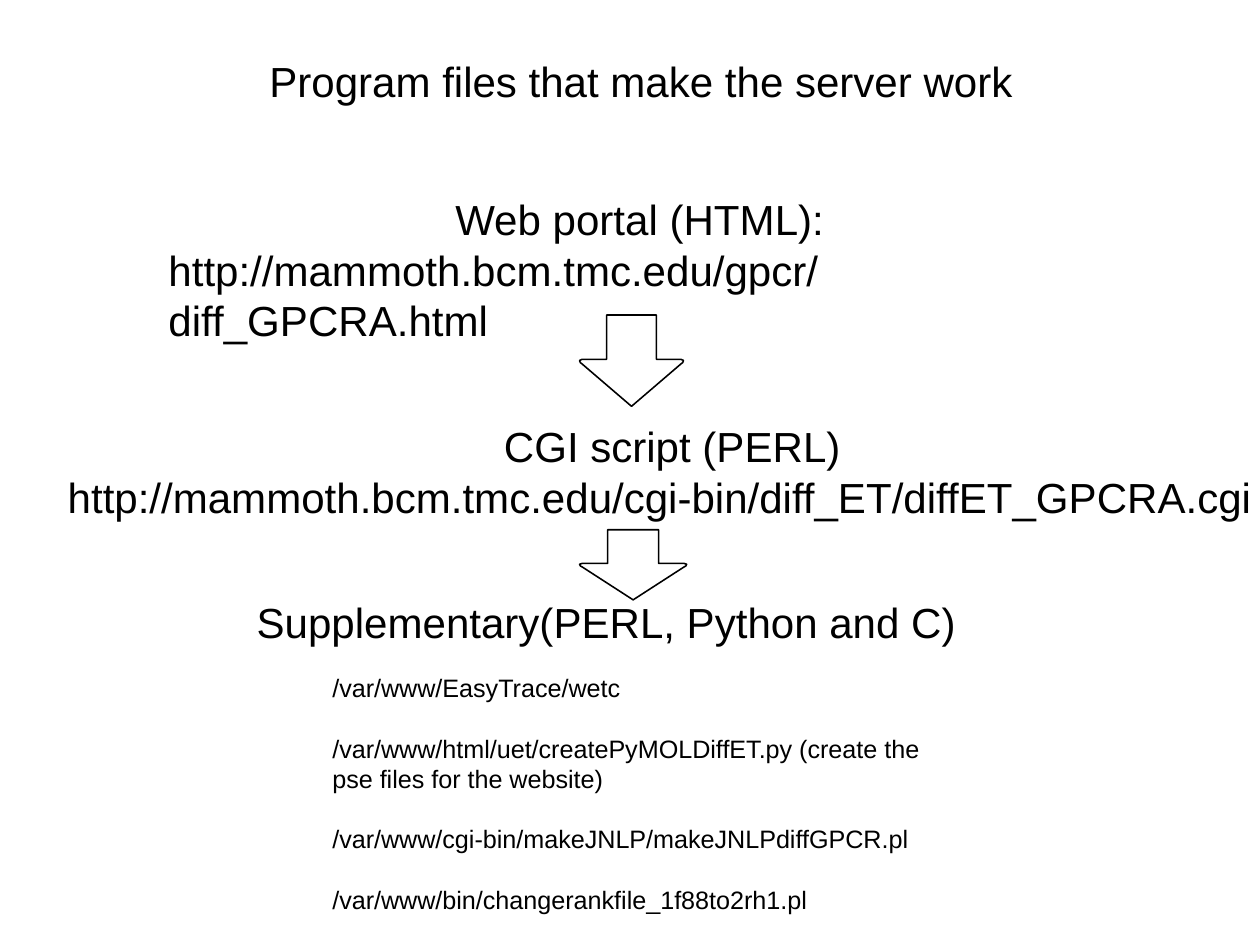
from dataclasses import dataclass

from pptx import Presentation
from pptx.dml.color import RGBColor as Color
from pptx.enum.text import MSO_ANCHOR as Anchor, PP_ALIGN as Align
from pptx.slide import Slide
from pptx.util import Pt


@dataclass(frozen=True)
class Theme:
    font: str = "Arial"
    ink: Color = Color(0, 0, 0)
    paper: Color = Color(255, 255, 255)
    large: float = 26.7
    small: float = 16
    lead: float = 1.2
    inset: float = 3
    stroke: float = 1


@dataclass(frozen=True)
class Line:
    text: str
    align: Align = Align.LEFT


@dataclass(frozen=True)
class Block:
    left: float
    top: float
    width: float
    height: float
    size: float
    lines: tuple[Line, ...]
    gap: float = 0


@dataclass(frozen=True)
class Arrow:
    mid: float
    top: float
    stem: float
    wing: float
    neck: float
    drop: float
    height: float


THEME = Theme()

BLOCKS = (
    Block(168, 32, 527, 65, THEME.large, (
        Line("Program files that make the server work"),
    )),
    Block(104, 120, 612, 70, THEME.large, (
        Line("Web portal (HTML): ", Align.CENTER),
        Line("http://mammoth.bcm.tmc.edu/gpcr/diff_GPCRA.html"),
    )),
    Block(40, 264, 774, 70, THEME.large, (
        Line("CGI script (PERL)", Align.CENTER),
        Line("http://mammoth.bcm.tmc.edu/cgi-bin/diff_ET/diffET_GPCRA.cgi"),
    )),
    Block(160, 376, 454, 52, THEME.large, (
        Line("Supplementary(PERL, Python and C)"),
    )),
    Block(208, 424, 407, 168, THEME.small, (
        Line("/var/www/EasyTrace/wetc"),
        Line("/var/www/html/uet/createPyMOLDiffET.py (create the pse files for the website)"),
        Line("/var/www/cgi-bin/makeJNLP/makeJNLPdiffGPCR.pl"),
        Line("/var/www/bin/changerankfile_1f88to2rh1.pl"),
    ), gap=THEME.small * THEME.lead),
)

ARROWS = (
    Arrow(401, 200, 15.8, 33, 28.2, 2.8, 58),
    Arrow(402, 336.4, 16.2, 34, 21.4, 2.1, 44.5),
)


def add_block(slide: Slide, block: Block) -> None:
    box = slide.shapes.add_textbox(
        Pt(block.left), Pt(block.top), Pt(block.width), Pt(block.height))
    frame = box.text_frame
    frame.word_wrap = True
    frame.vertical_anchor = Anchor.TOP
    frame.margin_left = frame.margin_right = Pt(THEME.inset)
    frame.margin_top = frame.margin_bottom = Pt(THEME.inset)
    for rank, line in enumerate(block.lines):
        para = frame.add_paragraph() if rank else frame.paragraphs[0]
        para.alignment = line.align
        para.line_spacing = Pt(block.size * THEME.lead)
        para.space_before = Pt(block.gap if rank else 0)
        run = para.add_run()
        run.text = line.text
        run.font.name = THEME.font
        run.font.size = Pt(block.size)
        run.font.color.rgb = THEME.ink


def add_arrow(slide: Slide, arrow: Arrow) -> None:
    side = [
        (arrow.stem, 0),
        (arrow.stem, arrow.neck),
        (arrow.wing - 1.5, arrow.neck),
        (arrow.wing, arrow.neck + arrow.drop / 4),
        (arrow.wing - 0.5, arrow.neck + arrow.drop * 3 / 4),
        (arrow.wing - 1.5, arrow.neck + arrow.drop),
    ]
    edge = side + [(0, arrow.height)] + [(-x, y) for x, y in reversed(side)]
    spots = [(Pt(arrow.mid + x), Pt(arrow.top + y)) for x, y in edge]
    pen = slide.shapes.build_freeform(*spots[0])
    pen.add_line_segments(spots[1:], close=True)
    shape = pen.convert_to_shape()
    shape.shadow.inherit = False
    shape.fill.solid()
    shape.fill.fore_color.rgb = THEME.paper
    shape.line.color.rgb = THEME.ink
    shape.line.width = Pt(THEME.stroke)


def main() -> None:
    deck = Presentation()
    deck.slide_width = Pt(800)
    deck.slide_height = Pt(600)
    slide = deck.slides.add_slide(deck.slide_layouts[6])
    for block in BLOCKS:
        add_block(slide, block)
    for arrow in ARROWS:
        add_arrow(slide, arrow)
    deck.save("out.pptx")


if __name__ == "__main__":
    main()
